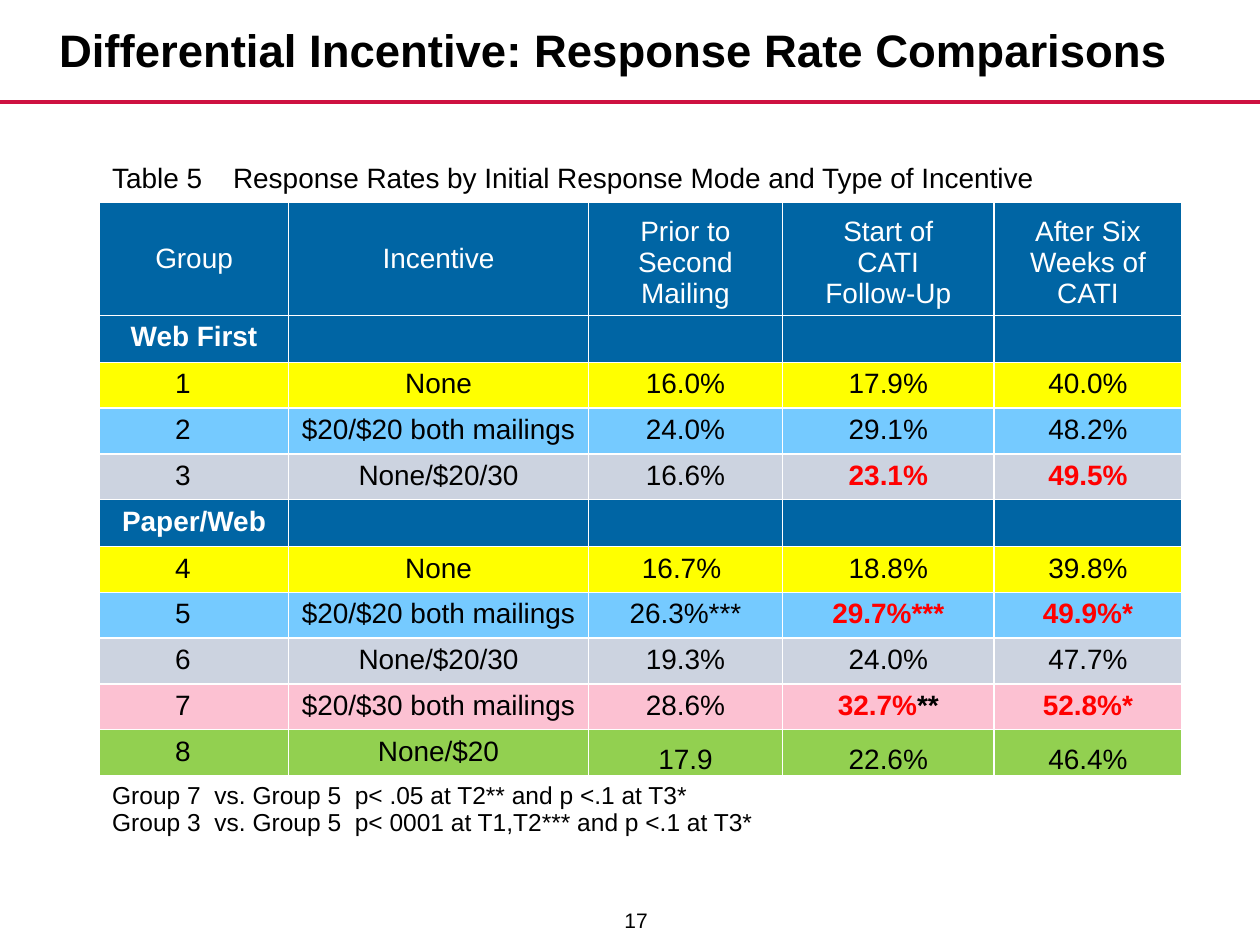
"""Build a slide with a table of survey response rates by mode and incentive."""
from lxml.etree import SubElement
from pptx import Presentation
from pptx.dml.color import RGBColor
from pptx.enum.shapes import MSO_CONNECTOR
from pptx.enum.text import MSO_ANCHOR, PP_ALIGN
from pptx.oxml import parse_xml
from pptx.oxml.ns import nsdecls, qn
from pptx.util import Inches, Pt

BLACK = RGBColor(0x00, 0x00, 0x00)
WHITE = RGBColor(0xFF, 0xFF, 0xFF)
RED = RGBColor(0xFF, 0x00, 0x00)
CRIMSON = RGBColor(0xCE, 0x11, 0x41)
NAVY = RGBColor(0x00, 0x65, 0xA4)
YELLOW = RGBColor(0xFF, 0xFF, 0x00)
SKY = RGBColor(0x75, 0xCA, 0xFF)
GRAY = RGBColor(0xCC, 0xD3, 0xE0)
PINK = RGBColor(0xFC, 0xC1, 0xD2)
GREEN = RGBColor(0x92, 0xD0, 0x50)

FONT = "Arial"
TITLE = "Differential Incentive: Response Rate Comparisons"
CAPTION = "Table 5\tResponse Rates by Initial Response Mode and Type of Incentive"
HEADINGS = [
    ["Group"],
    ["Incentive"],
    ["Prior to", "Second", "Mailing"],
    ["Start of", "CATI", "Follow-Up"],
    ["After Six", "Weeks of", "CATI"],
]
SECTIONS = [
    ("Web First", [
        (YELLOW, ["1", "None", "16.0%", "17.9%", "40.0%"]),
        (SKY, ["2", "$20/$20 both mailings", "24.0%", "29.1%", "48.2%"]),
        (GRAY, ["3", "None/$20/30", "16.6%", "23.1%", "49.5%"]),
    ]),
    ("Paper/Web", [
        (YELLOW, ["4", "None", "16.7% ", "18.8%", "39.8%"]),
        (SKY, ["5", "$20/$20 both mailings", "26.3%***", "29.7%***", "49.9%*"]),
        (GRAY, ["6", "None/$20/30", "19.3%", "24.0%", "47.7%"]),
        (PINK, ["7", "$20/$30 both mailings", "28.6%", "32.7%**", "52.8%*"]),
        (GREEN, ["8", "None/$20", "17.9", "22.6%", "46.4%"]),
    ]),
]
HIGHLIGHTS = {"23.1%", "49.5%", "29.7%***", "49.9%*", "32.7%", "52.8%*"}
SPLIT_RATES = {"32.7%**": ("32.7%", "**")}
FOOTNOTES = [
    "Group 7  vs. Group 5  p< .05 at T2** and p <.1 at T3*",
    "Group 3  vs. Group 5  p< 0001 at T1,T2*** and p <.1 at T3*",
]
COLUMN_WIDTHS = [1.5, 2.38, 1.54, 1.68, 1.49]
HEADING_HEIGHT, FOOTNOTE_HEIGHT = 0.9, 1.09
ROW_HEIGHT = 4 / 11


def add_run(paragraph, text, size=16, color=BLACK, bold=False):
    run = paragraph.add_run()
    run.text = text
    run.font.name = FONT
    run.font.size = Pt(size)
    run.font.bold = bold
    run.font.color.rgb = color


def add_paragraphs(frame, lines, align=PP_ALIGN.CENTER, **style):
    for index, line in enumerate(lines):
        paragraph = frame.add_paragraph() if index else frame.paragraphs[0]
        paragraph.alignment = align
        add_run(paragraph, line, **style)


def add_text_box(slide, text, left, top, width, height, align, **style):
    frame = slide.shapes.add_textbox(*map(Inches, (left, top, width, height))).text_frame
    frame.word_wrap = True
    frame.vertical_anchor = MSO_ANCHOR.MIDDLE
    add_paragraphs(frame, [text], align, **style)


def style_cell(cell, fill=None):
    if fill is None:
        cell.fill.background()
    else:
        cell.fill.solid()
        cell.fill.fore_color.rgb = fill
    properties = cell._tc.get_or_add_tcPr()
    for position, side in enumerate(("lnL", "lnR", "lnT", "lnB")):
        properties.insert(position, parse_xml(
            f'<a:{side} {nsdecls("a")} w="12700"><a:solidFill>'
            f'<a:srgbClr val="{WHITE}"/></a:solidFill></a:{side}>'))


def add_wide_row(table, row):
    cell = table.cell(row, 0)
    cell.merge(table.cell(row, len(COLUMN_WIDTHS) - 1))
    for column in range(len(COLUMN_WIDTHS)):
        style_cell(table.cell(row, column))
    return cell


def add_section_row(table, row, name):
    for column in range(len(COLUMN_WIDTHS)):
        cell = table.cell(row, column)
        style_cell(cell, NAVY)
        if column == 0:
            add_paragraphs(cell.text_frame, [name], color=WHITE, bold=True)
        else:
            SubElement(cell.text_frame.paragraphs[0]._p, qn("a:endParaRPr"), sz="1600")


def add_group_row(table, row, fill, values):
    for column, value in enumerate(values):
        cell = table.cell(row, column)
        style_cell(cell, fill)
        paragraph = cell.text_frame.paragraphs[0]
        if column == 0:
            paragraph.level = 1
            paragraph._p.get_or_add_pPr().set("marL", str(Inches(0.5)))
        else:
            paragraph.alignment = PP_ALIGN.CENTER
        for part in SPLIT_RATES.get(value, (value,)):
            marked = part in HIGHLIGHTS
            add_run(paragraph, part, color=RED if marked else BLACK,
                    bold=marked or value in SPLIT_RATES)
        if fill == GREEN and column > 1:
            cell.vertical_anchor = MSO_ANCHOR.BOTTOM
            cell.margin_left = cell.margin_right = cell.margin_top = Inches(0.01)
            cell.margin_bottom = 0


def add_rate_table(slide):
    body_count = sum(1 + len(groups) for _, groups in SECTIONS)
    heights = [ROW_HEIGHT, HEADING_HEIGHT, *[ROW_HEIGHT] * body_count, FOOTNOTE_HEIGHT]
    table = slide.shapes.add_table(
        len(heights), len(COLUMN_WIDTHS), Inches(0.79), Inches(1.24),
        Inches(sum(COLUMN_WIDTHS)), Inches(sum(heights))).table
    for column, width in zip(table.columns, COLUMN_WIDTHS):
        column.width = Inches(width)
    for table_row, height in zip(table.rows, heights):
        table_row.height = Inches(height)

    caption = add_wide_row(table, 0)
    caption.vertical_anchor = MSO_ANCHOR.MIDDLE
    paragraph_properties = caption.text_frame.paragraphs[0]._p.get_or_add_pPr()
    tabs = SubElement(paragraph_properties, qn("a:tabLst"))
    SubElement(tabs, qn("a:tab"), pos=str(Inches(0.96)), algn="l")
    add_paragraphs(caption.text_frame, [CAPTION], PP_ALIGN.LEFT)

    for column, lines in enumerate(HEADINGS):
        cell = table.cell(1, column)
        style_cell(cell, NAVY)
        cell.vertical_anchor = MSO_ANCHOR.BOTTOM if len(lines) > 1 else MSO_ANCHOR.MIDDLE
        add_paragraphs(cell.text_frame, lines, color=WHITE)

    row = 2
    for name, groups in SECTIONS:
        add_section_row(table, row, name)
        for row, (fill, values) in enumerate(groups, row + 1):
            add_group_row(table, row, fill, values)
        row += 1
    add_paragraphs(add_wide_row(table, row).text_frame, FOOTNOTES, PP_ALIGN.LEFT, size=14)


def main():
    presentation = Presentation()
    presentation.slide_width, presentation.slide_height = Inches(10), Inches(7.5)
    slide = presentation.slides.add_slide(presentation.slide_layouts[6])
    rule = slide.shapes.add_connector(
        MSO_CONNECTOR.STRAIGHT, 0, Inches(0.81), Inches(10), Inches(0.81))
    rule.line.color.rgb = CRIMSON
    rule.line.width = Pt(2)
    SubElement(rule._element.spPr, qn("a:effectLst"))
    add_rate_table(slide)
    add_text_box(slide, TITLE, 0, 0.03, 9.74, 0.73, PP_ALIGN.CENTER, size=26, bold=True)
    add_text_box(slide, "17", 4.76, 7.1, 0.48, 0.4, PP_ALIGN.RIGHT, size=12)
    presentation.save("out.pptx")


if __name__ == "__main__":
    main()
